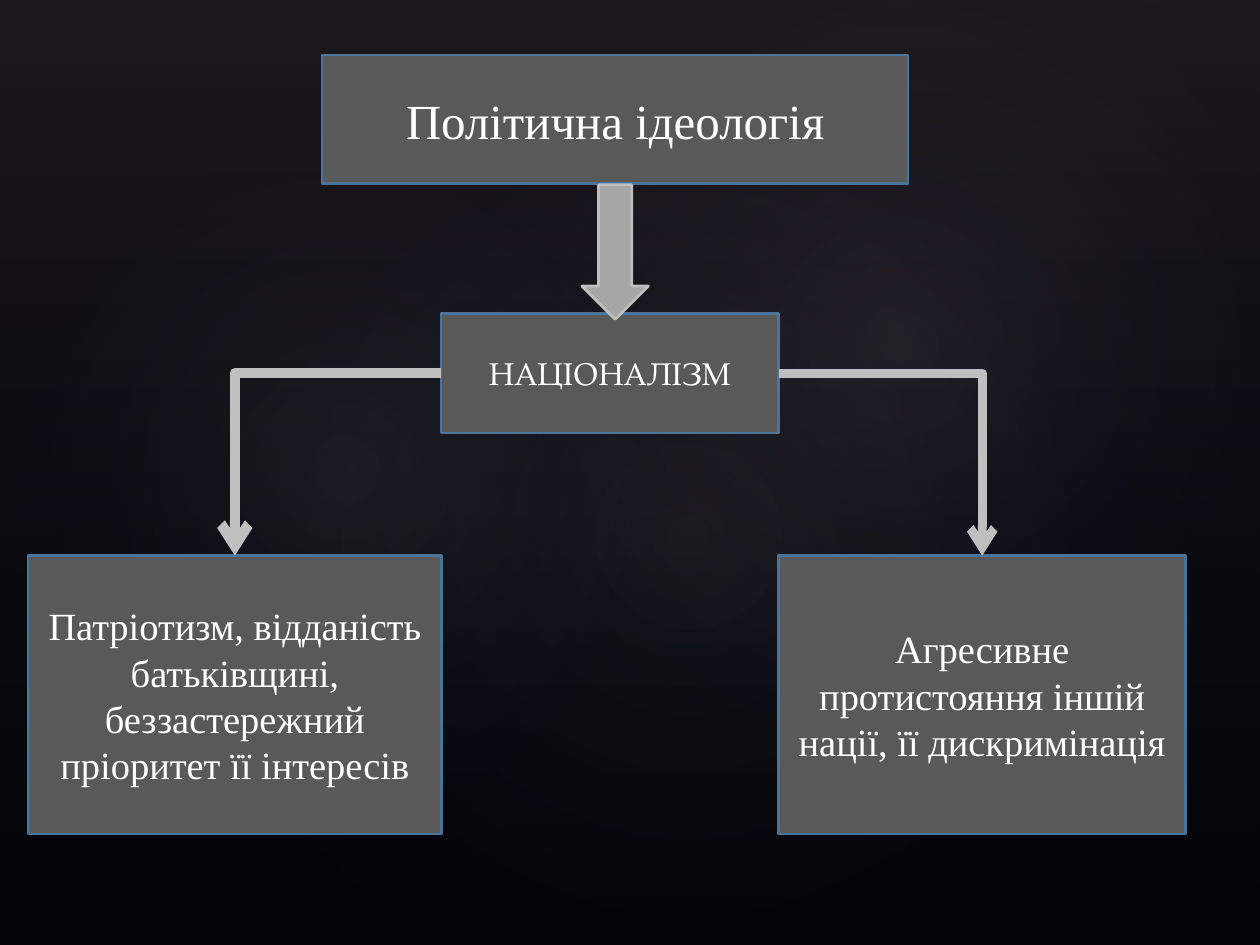
from lxml.etree import SubElement
from pptx import Presentation
from pptx.dml.color import RGBColor
from pptx.enum.shapes import MSO_CONNECTOR as Connector, MSO_SHAPE as Preset
from pptx.enum.text import MSO_ANCHOR as Anchor, PP_ALIGN as Align
from pptx.oxml.ns import qn
from pptx.util import Pt

BLACK = RGBColor(0x00, 0x00, 0x00)
WHITE = RGBColor(0xFF, 0xFF, 0xFF)
BOX_GRAY = RGBColor(0x59, 0x59, 0x59)
BOX_EDGE = RGBColor(0x49, 0x74, 0x9B)
ARROW_GRAY = RGBColor(0xA6, 0xA6, 0xA6)
LINE_GRAY = RGBColor(0xBF, 0xBF, 0xBF)
HAZE = RGBColor(0x50, 0x46, 0x52)
NAVY = RGBColor(0x24, 0x28, 0x52)
GLOW = RGBColor(0xC4, 0xBC, 0xC6)

WIDTH, HEIGHT = 720, 540
SERIF = "Times New Roman"
PAGELLA = "TeX Gyre Pagella"
TOP, LEFT, RIGHT = 0, 1, 3  # connection sites of a rectangle


class Diagram:
    edge_width = 1.5

    def __init__(self, page):
        self.page = page
        page.background.fill.solid()
        page.background.fill.fore_color.rgb = BLACK

    def shape(self, preset, bounds, fill=None, edge=None):
        shape = self.page.shapes.add_shape(preset, *map(Pt, bounds))
        shape.shadow.inherit = False
        if fill is None:
            shape.fill.background()
        else:
            shape.fill.solid()
            shape.fill.fore_color.rgb = fill
        if edge is None:
            shape.line.fill.background()
        else:
            shape.line.color.rgb = edge
            shape.line.width = Pt(self.edge_width)
        return shape

    def veil(self, preset, bounds, stops, rotation=0, radial=False):
        """Add a see-through gradient; stops are (position, colour, opacity) in percent."""
        shape = self.shape(preset, bounds)
        shape.rotation = rotation
        properties = shape._element.spPr
        gradient = SubElement(properties, qn("a:gradFill"), rotWithShape="1")
        properties.replace(properties.find(qn("a:noFill")), gradient)
        stop_list = SubElement(gradient, qn("a:gsLst"))
        for position, colour, opacity in stops:
            stop = SubElement(stop_list, qn("a:gs"), pos=str(position * 1000))
            tint = SubElement(stop, qn("a:srgbClr"), val=str(colour))
            SubElement(tint, qn("a:alpha"), val=str(opacity * 1000))
        if radial:
            circle = SubElement(gradient, qn("a:path"), {"path": "circle"})
            SubElement(circle, qn("a:fillToRect"), dict.fromkeys("ltrb", "50000"))
        else:
            SubElement(gradient, qn("a:lin"), ang="5400000", scaled="0")

    def box(self, bounds, text, size, font=SERIF):
        box = self.shape(Preset.RECTANGLE, bounds, BOX_GRAY, BOX_EDGE)
        frame = box.text_frame
        frame.word_wrap = True
        frame.vertical_anchor = Anchor.MIDDLE
        para = frame.paragraphs[0]
        para.text = text
        para.alignment = Align.CENTER
        para.font.name = font
        para.font.size = Pt(size)
        para.font.color.rgb = WHITE
        return box

    def branch(self, parent, side, child, width):
        """Join a side of the parent to the top of the child with one right-angle bend."""
        branch = self.page.shapes.add_connector(Connector.ELBOW, 0, 0, 0, 0)
        branch.begin_connect(parent, side)
        branch.end_connect(child, TOP)
        branch.line.color.rgb = LINE_GRAY
        branch.line.width = Pt(width)
        properties = branch._element.spPr
        properties.find(qn("a:prstGeom")).set("prst", "bentConnector2")
        line = properties.find(qn("a:ln"))
        SubElement(line, qn("a:round"))
        SubElement(line, qn("a:tailEnd"), type="arrow")
        SubElement(properties, qn("a:effectLst"))


def main():
    deck = Presentation()
    deck.slide_width, deck.slide_height = Pt(WIDTH), Pt(HEIGHT)
    diagram = Diagram(deck.slides.add_slide(deck.slide_layouts[6]))

    diagram.veil(Preset.RECTANGLE, (0, 0, WIDTH, HEIGHT), [(0, HAZE, 36), (100, NAVY, 10)])
    for bounds, rotation, opacity in (
        ((108, 82, 570, 449), 328.7, 7),
        ((-21.5, 92, 436, 353), 294.3, 8),
        ((258, 9.5, 510.5, 374.5), 328.7, 8),
    ):
        stops = [(0, GLOW, opacity), (58, NAVY, 0)]
        diagram.veil(Preset.OVAL, bounds, stops, rotation, radial=True)

    diagram.box((184, 31.5, 335, 73.5), "Політична ідеологія", 28)
    nationalism = diagram.box((252, 179, 193, 68.5), "НАЦІОНАЛІЗМ", 18, PAGELLA)
    patriotism = diagram.box(
        (16, 317.5, 236.5, 159),
        "Патріотизм, відданість батьківщині, беззастережний пріоритет її інтересів",
        22,
    )
    aggression = diagram.box(
        (445, 317.5, 232.5, 159),
        "Агресивне протистояння іншій нації, її дискримінація",
        22,
    )
    diagram.branch(nationalism, LEFT, patriotism, 5.75)
    diagram.branch(nationalism, RIGHT, aggression, 5)
    diagram.shape(Preset.DOWN_ARROW, (332.5, 105.5, 38, 77), ARROW_GRAY, LINE_GRAY)

    deck.save("out.pptx")


if __name__ == "__main__":
    main()
